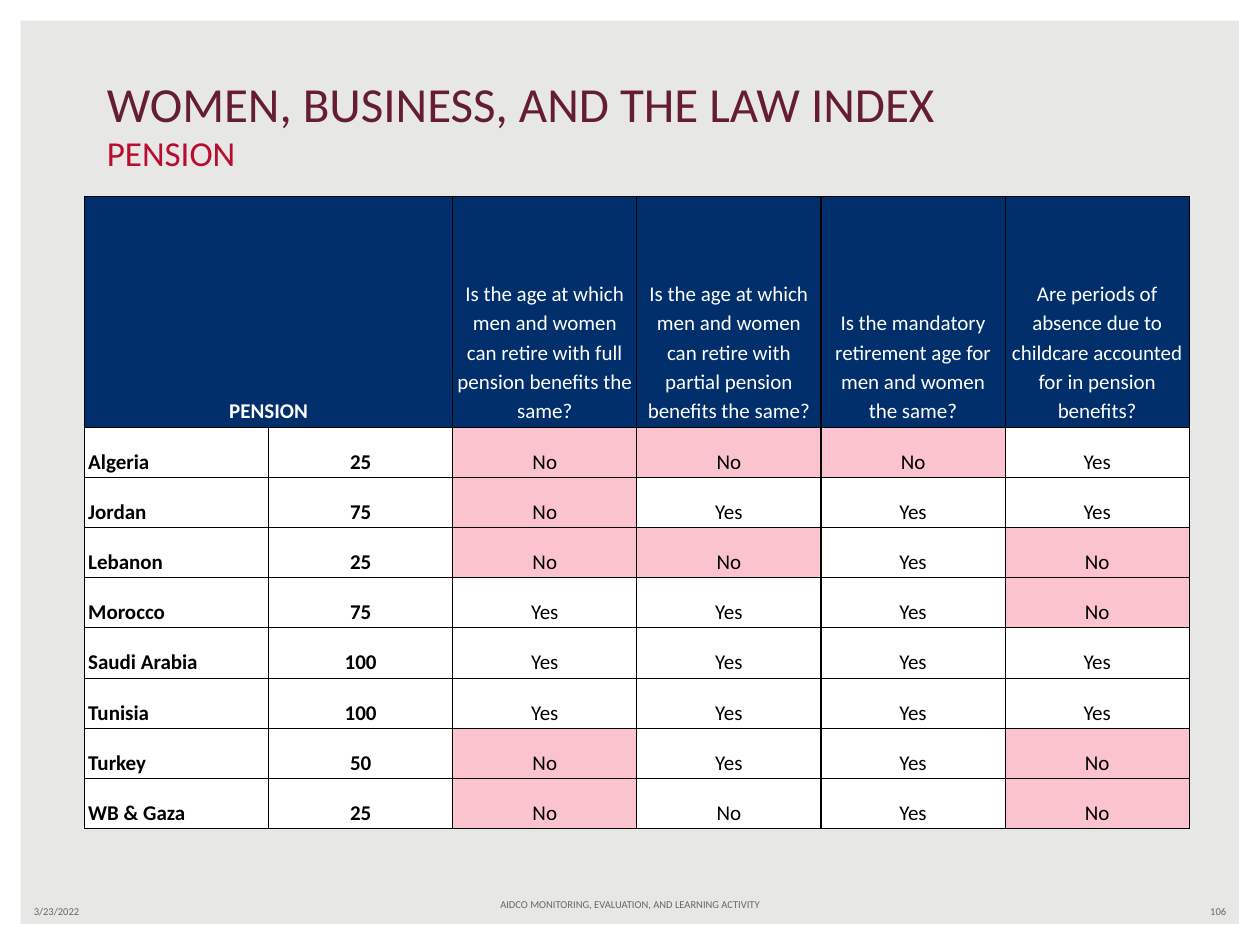
from dataclasses import dataclass

from lxml import etree
from pptx import Presentation
from pptx.dml.color import RGBColor
from pptx.enum.shapes import MSO_SHAPE
from pptx.enum.text import MSO_ANCHOR, PP_ALIGN
from pptx.oxml.ns import qn
from pptx.util import Inches, Pt

FRAME = MSO_SHAPE.FRAME
LEFT, CENTER, RIGHT = PP_ALIGN.LEFT, PP_ALIGN.CENTER, PP_ALIGN.RIGHT
MIDDLE, BOTTOM = MSO_ANCHOR.MIDDLE, MSO_ANCHOR.BOTTOM


@dataclass(frozen=True)
class Theme:
    """Colours, font and type sizes of the slide."""

    font: str = "Calibri"
    background: str = "E7E7E5"
    white: str = "FFFFFF"
    black: str = "000000"
    title: str = "651D32"
    subtitle: str = "BA0C2F"
    footer: str = "6C6463"
    header: str = "002F6C"
    negative: str = "FBC3CE"
    title_size: int = 28
    subtitle_size: int = 20
    table_size: int = 12
    footer_size: int = 6
    border_width: float = 0.75
    line_spacing: float = 1.15


THEME = Theme()
QUESTIONS = [
    "Is the age at which men and women can retire with full pension benefits the same?",
    "Is the age at which men and women can retire with partial pension benefits the same?",
    "Is the mandatory retirement age for men and women the same?",
    "Are periods of absence due to childcare accounted for in pension benefits?",
]
COUNTRIES = [
    ["Algeria", "25", "No", "No", "No", "Yes"],
    ["Jordan", "75", "No", "Yes", "Yes", "Yes"],
    ["Lebanon", "25", "No", "No", "Yes", "No"],
    ["Morocco", "75", "Yes", "Yes", "Yes", "No"],
    ["Saudi Arabia", "100", "Yes", "Yes", "Yes", "Yes"],
    ["Tunisia", "100", "Yes", "Yes", "Yes", "Yes"],
    ["Turkey", "50", "No", "Yes", "Yes", "No"],
    ["WB & Gaza", "25", "No", "No", "Yes", "No"],
]
UNSHADED = {("WB & Gaza", 3)}


def set_attributes(target, values):
    """Set each named attribute of the target."""
    for name, value in values.items():
        setattr(target, name, value)


def add_run(paragraph, text, size, color, bold=False):
    """Add a run of formatted text to a paragraph."""
    run = paragraph.add_run()
    run.text = text
    set_attributes(run.font, {"name": THEME.font, "size": Pt(size), "bold": bold})
    run.font.color.rgb = RGBColor.from_string(color)


def add_text_box(slide, box, alignment, anchor, bottom=0.05):
    """Add an empty text box and return its first paragraph."""
    frame = slide.shapes.add_textbox(*map(Inches, box)).text_frame
    set_attributes(frame, {
        "word_wrap": True, "vertical_anchor": anchor,
        "margin_left": Inches(0.1), "margin_right": Inches(0.1),
        "margin_top": Inches(0.05), "margin_bottom": Inches(bottom),
    })
    paragraph = frame.paragraphs[0]
    paragraph.alignment = alignment
    return paragraph


def add_frame(slide, box):
    """Colour the background and put a white frame around it."""
    background = slide.background.fill
    background.solid()
    background.fore_color.rgb = RGBColor.from_string(THEME.background)
    frame = slide.shapes.add_shape(FRAME, *map(Inches, box))
    frame.adjustments[0] = 0.022
    frame.shadow.inherit = False
    frame.fill.solid()
    frame.fill.fore_color.rgb = RGBColor.from_string(THEME.white)
    frame.line.fill.background()


def add_title(slide, box):
    """Add the title with its subtitle on a second line."""
    paragraph = add_text_box(slide, box, LEFT, BOTTOM)
    add_run(paragraph, "WOMEN, BUSINESS, AND THE LAW INDEX", THEME.title_size, THEME.title)
    paragraph.add_line_break()
    add_run(paragraph, "PENSION", THEME.subtitle_size, THEME.subtitle)


def add_borders(cell):
    """Draw a thin line on all four sides of a cell."""
    properties = cell._tc.get_or_add_tcPr()
    for side in ("lnL", "lnR", "lnT", "lnB"):
        line = etree.SubElement(properties, qn(f"a:{side}"), w=str(Pt(THEME.border_width)))
        fill = etree.SubElement(line, qn("a:solidFill"))
        etree.SubElement(fill, qn("a:srgbClr"), val=THEME.black)


def fill_cell(cell, text, fill, color, alignment=CENTER, bold=False):
    """Write and format one table cell."""
    set_attributes(cell, {
        "vertical_anchor": BOTTOM,
        "margin_left": Inches(0.03), "margin_right": Inches(0.03),
        "margin_top": Inches(0.02), "margin_bottom": Inches(0.02),
    })
    add_borders(cell)
    cell.fill.solid()
    cell.fill.fore_color.rgb = RGBColor.from_string(fill)
    paragraph = cell.text_frame.paragraphs[0]
    set_attributes(paragraph, {"alignment": alignment, "line_spacing": THEME.line_spacing})
    if text:
        add_run(paragraph, text, THEME.table_size, color, bold)


def add_pension_table(slide, box, header_height):
    """Add the table of pension scores and answers by country."""
    left, top, width, height = box
    headings = ["PENSION", "", *QUESTIONS]
    table = slide.shapes.add_table(
        len(COUNTRIES) + 1, len(headings), *map(Inches, box)).table
    set_attributes(table, {"first_row": False, "horz_banding": False})
    for column in table.columns:
        column.width = Inches(width / len(headings))
    for row in table.rows:
        row.height = Inches((height - header_height) / len(COUNTRIES))
    table.rows[0].height = Inches(header_height)
    for index, heading in enumerate(headings):
        fill_cell(table.cell(0, index), heading, THEME.header, THEME.white, bold=index == 0)
    table.cell(0, 0).merge(table.cell(0, 1))
    for row_index, values in enumerate(COUNTRIES, 1):
        for index, value in enumerate(values):
            shaded = value == "No" and (values[0], index) not in UNSHADED
            fill_cell(
                table.cell(row_index, index), value,
                THEME.negative if shaded else THEME.white, THEME.black,
                LEFT if index == 0 else CENTER, bold=index < 2)


def add_footer(slide, box):
    """Add the date, the activity name and the slide number."""
    left, top, width, height = box
    side = 2.33
    parts = [
        ("3/23/2022", (left, top + 0.05, side, 0.2), LEFT, 0.05),
        ("AIDCO MONITORING, EVALUATION, AND LEARNING ACTIVITY",
         (left + (width - 3.17) / 2, top, 3.17, height), CENTER, 0.15),
        ("106", (left + width - side, top + 0.05, side, 0.2), RIGHT, 0.05),
    ]
    for text, part_box, alignment, bottom in parts:
        paragraph = add_text_box(slide, part_box, alignment, MIDDLE, bottom)
        add_run(paragraph, text, THEME.footer_size, THEME.footer)


def main():
    """Build the slide and save it."""
    presentation = Presentation()
    set_attributes(presentation, {"slide_width": Inches(10), "slide_height": Inches(7.5)})
    slide = presentation.slides.add_slide(presentation.slide_layouts[6])
    add_frame(slide, (0, 0, 10, 7.5))
    add_title(slide, (0.75, 0.52, 8.5, 0.91))
    add_pension_table(slide, (0.67, 1.56, 8.77, 5.02), header_height=1.83)
    add_footer(slide, (0.17, 7.08, 9.66, 0.3))
    presentation.save("out.pptx")


if __name__ == "__main__":
    main()
